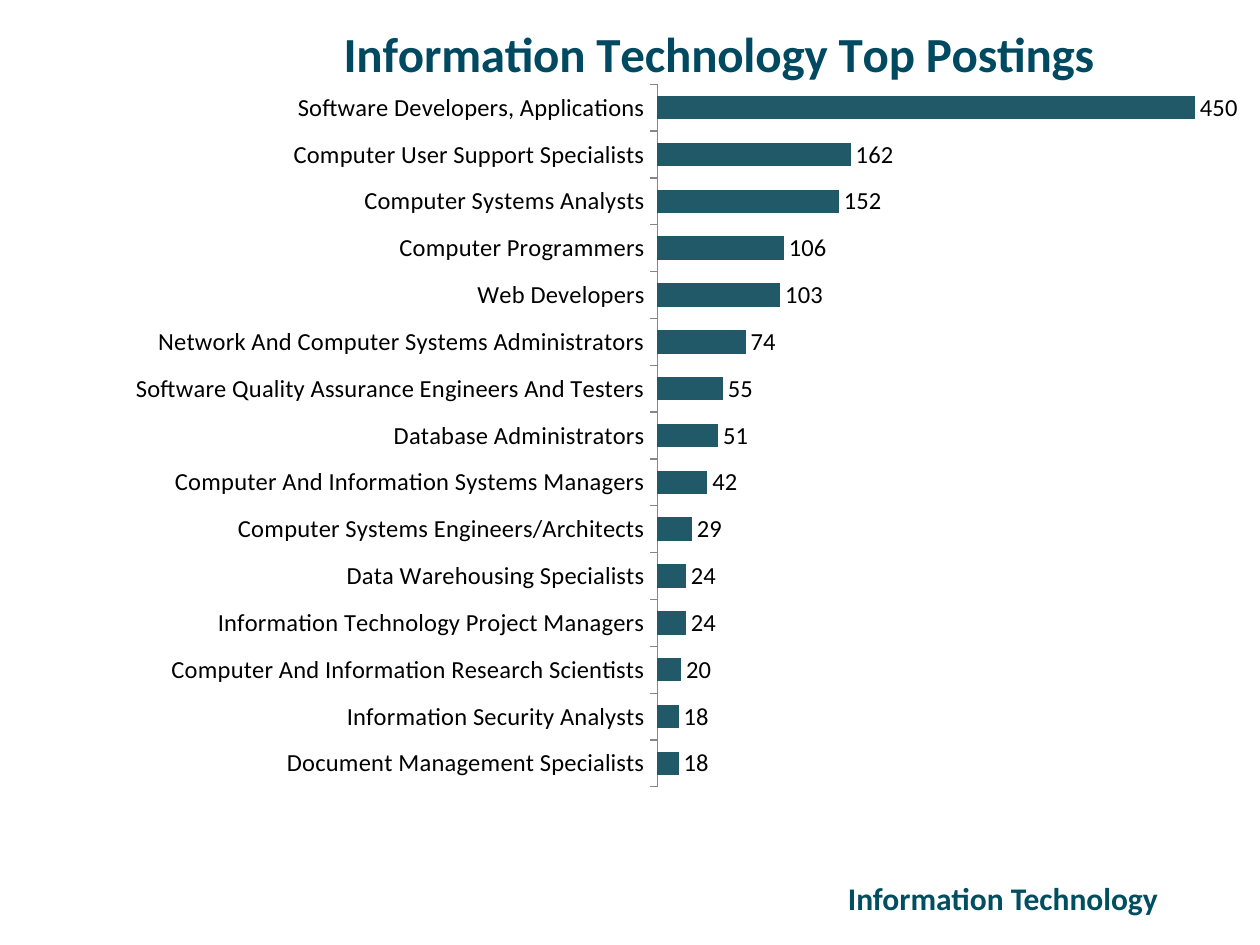
from lxml import etree
from pptx import Presentation
from pptx import util as u
from pptx.chart import data as chart_data
from pptx.dml.color import RGBColor
from pptx.enum import chart as kinds, text
from pptx.oxml.ns import qn

FONT = "Calibri"
POSTINGS = {
    "Software Developers, Applications": 450,
    "Computer User Support Specialists": 162,
    "Computer Systems Analysts": 152,
    "Computer Programmers": 106,
    "Web Developers": 103,
    "Network And Computer Systems Administrators": 74,
    "Software Quality Assurance Engineers And Testers": 55,
    "Database Administrators": 51,
    "Computer And Information Systems Managers": 42,
    "Computer Systems Engineers/Architects": 29,
    "Data Warehousing Specialists": 24,
    "Information Technology Project Managers": 24,
    "Computer And Information Research Scientists": 20,
    "Information Security Analysts": 18,
    "Document Management Specialists": 18,
}


def color(value):
    """Turn a hex string into a colour."""
    return RGBColor.from_string(value)


def style(font, size, shade, bold=False):
    """Give a font its format."""
    for name, value in {"name": FONT, "size": u.Pt(size), "bold": bold}.items():
        setattr(font, name, value)
    font.color.rgb = color(shade)


def place(parent, after, values):
    """Set a manual layout in a chart part, after the named child if it exists."""
    for old in parent.findall(qn("c:layout")):
        parent.remove(old)
    layout = etree.Element(qn("c:layout"))
    manual = etree.SubElement(layout, qn("c:manualLayout"))
    for tag, value in values.items():
        etree.SubElement(manual, qn(f"c:{tag}")).set("val", str(value))
    previous = parent.find(qn(after)) if after else None
    parent.insert(0 if previous is None else parent.index(previous) + 1, layout)


def add_postings_chart(page, box):
    """Draw the bar chart of job postings with its title."""
    data = chart_data.CategoryChartData(number_format="#,##0")
    data.categories = list(POSTINGS)
    data.add_series("Series 1", list(POSTINGS.values()))
    chart = page.shapes.add_chart(
        kinds.XL_CHART_TYPE.BAR_CLUSTERED, *map(u.Inches, box), data).chart
    style(chart.font, 10, "000000")
    chart.has_legend = False
    edges = {"xMode": "edge", "yMode": "edge"}

    chart.has_title = True
    title = chart.chart_title
    span = title.text_frame.paragraphs[0].add_run()
    span.text = "Information Technology Top Postings"
    style(span.font, 28, "004A61", True)
    place(title._element, "c:tx", {**edges, "x": 0.21, "y": 0.01})

    plot = chart.plots[0]
    plot.gap_width, plot.vary_by_categories = 100, False
    fill = plot.series[0].format.fill
    fill.solid()
    fill.fore_color.rgb = color("215968")
    plot.has_data_labels = True
    labels = plot.data_labels
    for name, value in {"show_value": True, "number_format": "#,##0",
                        "number_format_is_linked": False,
                        "position": kinds.XL_LABEL_POSITION.OUTSIDE_END}.items():
        setattr(labels, name, value)
    style(labels.font, 14, "000000")

    jobs, counts = chart.category_axis, chart.value_axis
    jobs.reverse_order = True
    jobs.major_tick_mark = kinds.XL_TICK_MARK.OUTSIDE
    jobs.format.line.color.rgb = color("868686")
    jobs.format.line.width = u.Pt(0.75)
    style(jobs.tick_labels.font, 14, "000000")
    for name, value in {"minimum_scale": 0, "maximum_scale": 500,
                        "has_major_gridlines": False, "visible": False}.items():
        setattr(counts, name, value)
    place(plot._element.getparent(), None,
          {"layoutTarget": "inner", **edges,
           "x": 0.441, "y": 0.101, "w": 0.428, "h": 0.881})


def add_section_label(page, box):
    """Write the section name at the foot of the page."""
    frame = page.shapes.add_textbox(*map(u.Inches, box)).text_frame
    frame.word_wrap = True
    frame.vertical_anchor = text.MSO_ANCHOR.MIDDLE
    para = frame.paragraphs[0]
    para.alignment = text.PP_ALIGN.CENTER
    span = para.add_run()
    span.text = "Information Technology"
    style(span.font, 18, "004E61", True)


def main():
    """Build the deck."""
    deck = Presentation()
    deck.slide_width, deck.slide_height = u.Inches(10), u.Inches(7.5)
    page = deck.slides.add_slide(deck.slide_layouts[6])
    add_section_label(page, (6.25, 6.86, 3.42, 0.53))
    add_postings_chart(page, (0.33, 0.03, 11.08, 6.33))
    deck.save("out.pptx")


if __name__ == "__main__":
    main()
